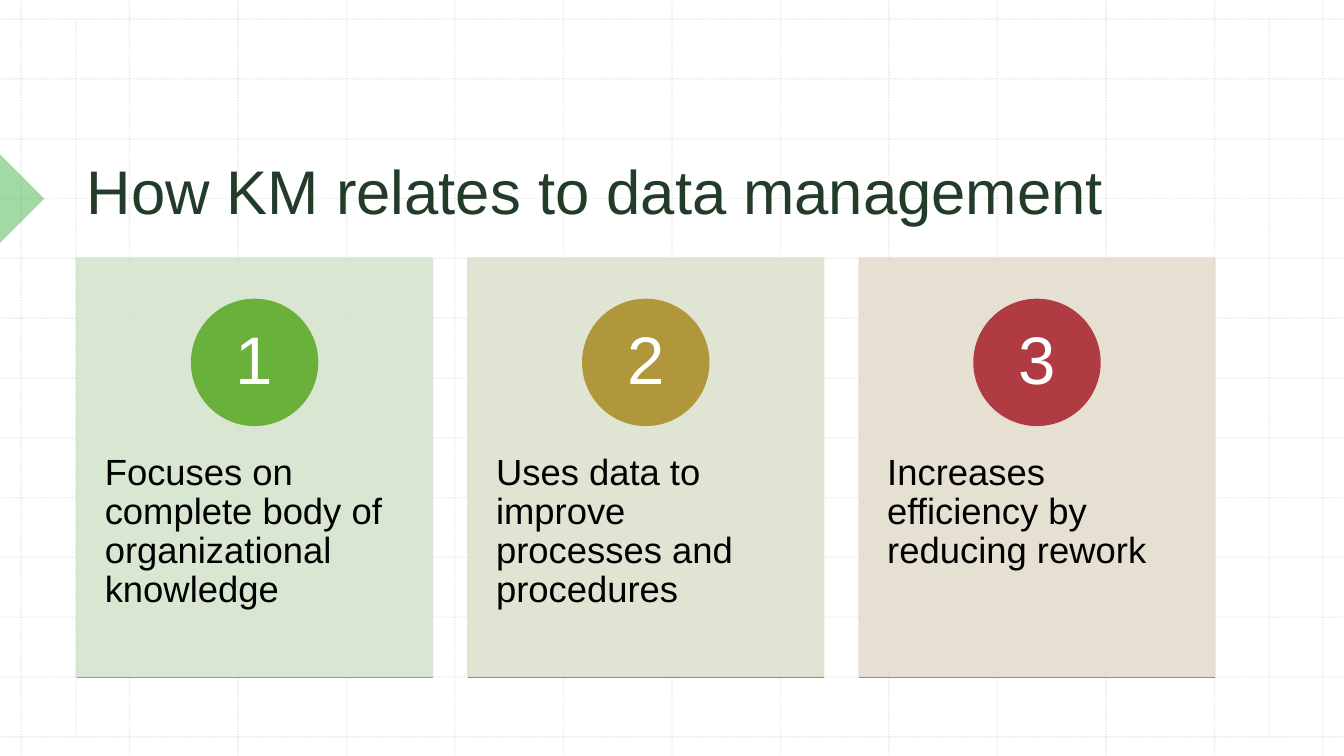
"""Build the slide on how KM relates to data management."""
from lxml.etree import SubElement
from pptx import Presentation
from pptx.dml.color import RGBColor
from pptx.enum.dml import MSO_LINE
from pptx.enum.shapes import MSO_CONNECTOR, MSO_SHAPE
from pptx.enum.text import MSO_ANCHOR, PP_ALIGN
from pptx.oxml.ns import qn
from pptx.util import Inches, Pt

COLORS = {
    "grid": "BCBCBC",
    "marker": "47B54A",
    "title": "223C29",
    "body": "000000",
    "number": "FFFFFF",
    "green_tint": "D4E4CE",
    "olive_tint": "DDE2CF",
    "sand_tint": "E4DDCE",
    "green": "69B13B",
    "gold": "B1973B",
    "red": "B13B42",
    "olive": "96A942",
    "orange": "C3774D",
}
WIDTH, HEIGHT = 13.33, 7.5
CARD_LEFT, CARD_TOP, CARD_WIDTH, CARD_HEIGHT, CARD_PITCH = 0.76, 2.56, 3.53, 4.16, 3.88
CIRCLE = 1.25
GRID_LEFT, GRID_RIGHT, GRID_TOP, GRID_BOTTOM, GRID_STEPS = 0.21, 13.12, 0.19, 7.31, 12
CARDS = [
    ("Focuses on complete body of organizational knowledge", "green_tint", "green", "olive"),
    ("Uses data to improve processes and procedures", "olive_tint", "gold", "orange"),
    ("Increases efficiency by reducing rework", "sand_tint", "red", "green"),
]


class SlideBuilder:
    """Holds the font, the colours and the current slide."""

    def __init__(self, slide, colors, font):
        self.slide, self.colors, self.font = slide, colors, font

    def rgb(self, name):
        return RGBColor.from_string(self.colors[name])

    def fade(self, element, opacity):
        for color in element.spPr.iter(qn("a:srgbClr")):
            SubElement(color, qn("a:alpha")).set("val", str(opacity * 1000))

    def line(self, x1, y1, x2, y2, color, dash=None, opacity=100):
        rule = self.slide.shapes.add_connector(
            MSO_CONNECTOR.STRAIGHT, Inches(x1), Inches(y1), Inches(x2), Inches(y2))
        rule.line.color.rgb = self.rgb(color)
        rule.line.width = Pt(1)
        if dash:
            rule.line.dash_style = dash
        if opacity < 100:
            self.fade(rule.element, opacity)
        SubElement(rule.element.spPr, qn("a:effectLst"))

    def shape(self, kind, left, top, width, height, color, opacity=100, outlined=True):
        figure = self.slide.shapes.add_shape(
            kind, Inches(left), Inches(top), Inches(width), Inches(height))
        figure.shadow.inherit = False
        figure.fill.solid()
        figure.fill.fore_color.rgb = self.rgb(color)
        if outlined:
            figure.line.color.rgb = self.rgb(color)
            figure.line.width = Pt(1)
        else:
            figure.line.fill.background()
        if opacity < 100:
            self.fade(figure.element, opacity)
        return figure

    def set_text(self, holder, words, size, color, anchor=MSO_ANCHOR.TOP,
                 align=PP_ALIGN.LEFT, spacing=1.0, insets=(0.1, 0.05)):
        frame = holder.text_frame
        frame.word_wrap = True
        frame.vertical_anchor = anchor
        frame.margin_left = frame.margin_right = Inches(insets[0])
        frame.margin_top = frame.margin_bottom = Inches(insets[1])
        paragraph = frame.paragraphs[0]
        paragraph.text = words
        paragraph.alignment = align
        paragraph.line_spacing = spacing
        paragraph.font.name = self.font
        paragraph.font.size = Pt(size)
        paragraph.font.color.rgb = self.rgb(color)

    def text(self, left, top, width, height, words, size, color, **layout):
        box = self.slide.shapes.add_textbox(
            Inches(left), Inches(top), Inches(width), Inches(height))
        self.set_text(box, words, size, color, **layout)

    def grid(self):
        x_step = (GRID_RIGHT - GRID_LEFT) / GRID_STEPS
        y_step = (GRID_BOTTOM - GRID_TOP) / GRID_STEPS
        columns = [(GRID_LEFT + x_step * i, 0, HEIGHT) for i in range(GRID_STEPS + 1)]
        margins = [(x, GRID_TOP, GRID_BOTTOM) for x in (0.75, 12.59)]
        for x, top, bottom in columns + margins:
            self.line(x, top, x, bottom, "grid", MSO_LINE.ROUND_DOT, 30)
        for i in range(GRID_STEPS + 1):
            y = GRID_TOP + y_step * i
            self.line(0, y, WIDTH, y, "grid", MSO_LINE.ROUND_DOT, 30)

    def card(self, index, words, tint, accent, base):
        left = CARD_LEFT + CARD_PITCH * index
        bottom = CARD_TOP + CARD_HEIGHT
        self.shape(MSO_SHAPE.RECTANGLE, left, CARD_TOP, CARD_WIDTH, CARD_HEIGHT, tint, 90)
        self.text(left, 4.14, CARD_WIDTH, 2.49, words, 26, "body",
                  spacing=0.9, insets=(0.28, 0.36))
        circle = self.shape(MSO_SHAPE.OVAL, left + (CARD_WIDTH - CIRCLE) / 2, 2.97,
                            CIRCLE, CIRCLE, accent)
        self.set_text(circle, str(index + 1), 48, "number", MSO_ANCHOR.MIDDLE,
                      PP_ALIGN.CENTER, 0.9, (0.1, 0.01))
        self.line(left, bottom, left + CARD_WIDTH, bottom, base)


def main():
    deck = Presentation()
    deck.slide_width, deck.slide_height = Inches(WIDTH), Inches(HEIGHT)
    builder = SlideBuilder(deck.slides.add_slide(deck.slide_layouts[6]), COLORS, "Arial")
    builder.grid()
    marker = builder.shape(MSO_SHAPE.RIGHT_TRIANGLE, -0.31, 1.66, 0.62, 0.62,
                           "marker", 50, outlined=False)
    marker.rotation = 225
    builder.text(0.76, 0.79, 11.29, 1.51, "How KM relates to data management",
                 44, "title", anchor=MSO_ANCHOR.BOTTOM)
    for index, card in enumerate(CARDS):
        builder.card(index, *card)
    deck.save("out.pptx")


if __name__ == "__main__":
    main()
